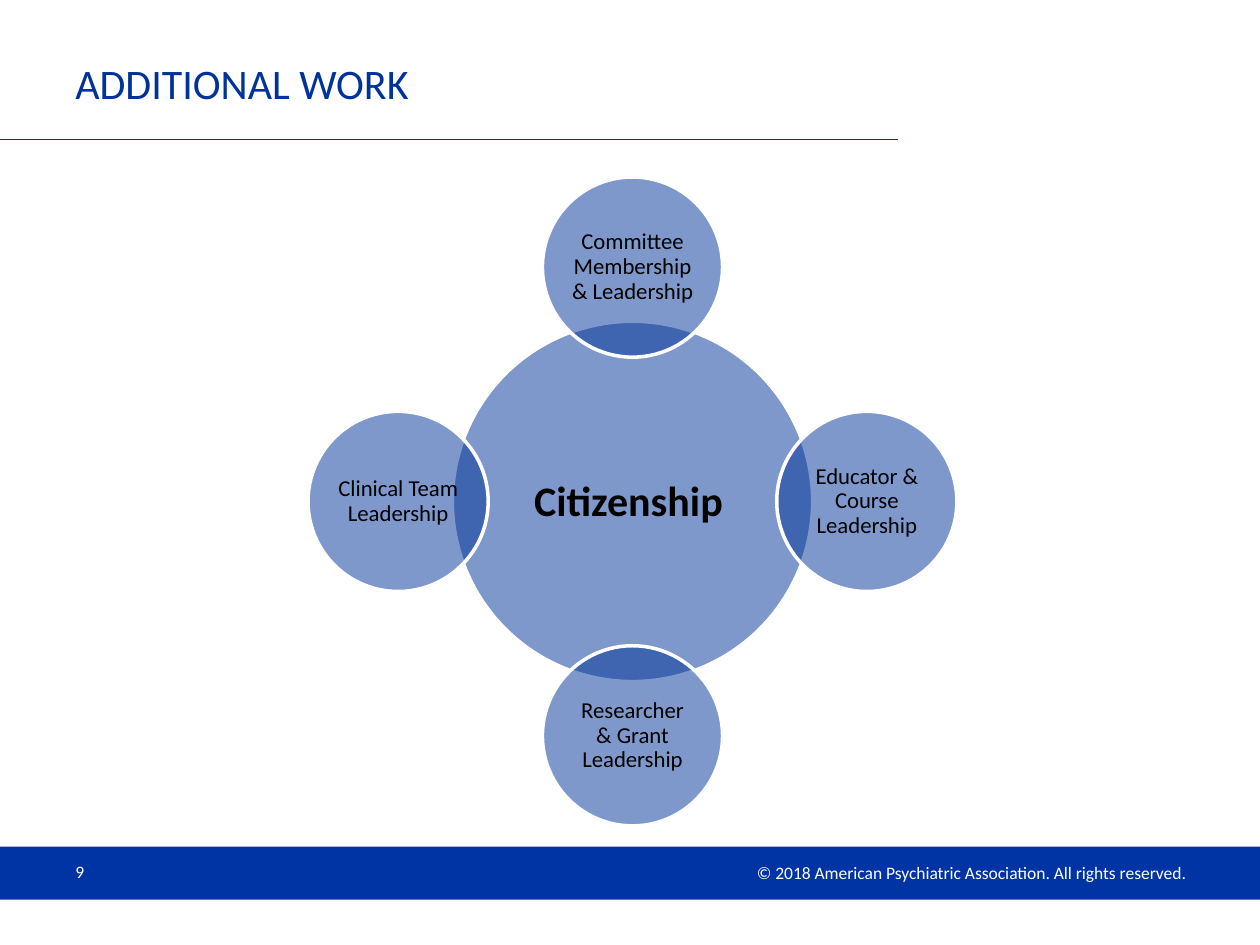
from dataclasses import dataclass

from lxml import etree
from pptx import Presentation
from pptx.dml.color import RGBColor
from pptx.enum.shapes import MSO_CONNECTOR, MSO_SHAPE
from pptx.enum.text import MSO_ANCHOR, PP_ALIGN
from pptx.oxml.ns import qn
from pptx.slide import Slide
from pptx.util import Inches, Pt


def rgb(value):
    return RGBColor.from_string(value)


@dataclass
class Deck:
    """Style and drawing methods for the current slide."""

    s: Slide
    font: str = "Calibri"
    navy: str = "003399"
    band_blue: str = "0033A3"
    white: str = "FFFFFF"
    black: str = "000000"

    def set_text(self, sp, text, size, color, align=PP_ALIGN.LEFT, bold=False, wrap=True):
        tf = sp.text_frame
        tf.word_wrap = wrap
        tf.vertical_anchor = MSO_ANCHOR.MIDDLE
        p = tf.paragraphs[0]
        p.text = text
        p.alignment = align
        p.font.name = self.font
        p.font.size = Pt(size)
        p.font.bold = bold
        p.font.color.rgb = rgb(color)
        return tf

    def text(self, x, y, w, h, *args, **style):
        sp = self.s.shapes.add_textbox(Inches(x), Inches(y), Inches(w), Inches(h))
        self.set_text(sp, *args, **style)

    def band(self, x, y, w, h):
        sp = self.s.shapes.add_shape(
            MSO_SHAPE.RECTANGLE, Inches(x), Inches(y), Inches(w), Inches(h))
        sp.shadow.inherit = False
        sp.fill.solid()
        sp.fill.fore_color.rgb = rgb(self.band_blue)
        sp.line.fill.background()

    def rule(self, x1, x2, y):
        line = self.s.shapes.add_connector(
            MSO_CONNECTOR.STRAIGHT, Inches(x1), Inches(y), Inches(x2), Inches(y))
        line.line.color.rgb = rgb(self.navy)
        line.line.width = Pt(0.75)
        etree.SubElement(line._element.spPr, qn("a:effectLst"))

    def circle(self, cx, cy, d, label=None):
        sp = self.s.shapes.add_shape(
            MSO_SHAPE.OVAL, Inches(cx - d / 2), Inches(cy - d / 2), Inches(d), Inches(d))
        sp.shadow.inherit = False
        sp.fill.solid()
        sp.fill.fore_color.rgb = rgb(self.navy)
        color = sp._element.spPr.find(qn("a:solidFill"))[0]
        etree.SubElement(color, qn("a:alpha")).set("val", "50000")
        sp.line.color.rgb = rgb(self.white)
        sp.line.width = Pt(2)
        if label:
            tf = self.set_text(sp, label, 13, self.black, PP_ALIGN.CENTER)
            tf.margin_left = tf.margin_right = Inches(0.02)
            tf.margin_top = tf.margin_bottom = Inches(0.02)
            tf.paragraphs[0].line_spacing = 0.9


def main():
    prs = Presentation()
    prs.slide_width, prs.slide_height = Inches(10), Inches(7.5)
    deck = Deck(prs.slides.add_slide(prs.slide_layouts[6]))

    deck.band(0, 6.72, 10, 0.42)
    deck.rule(0, 7.13, 1.11)
    deck.text(5.18, 6.79, 4.33, 0.27,
              "© 2018 American Psychiatric Association. All rights reserved.",
              10, deck.white, align=PP_ALIGN.RIGHT)
    deck.text(0.5, 6.72, 2.33, 0.4, "9", 10, deck.white)
    deck.text(0.5, 0.34, 6.63, 0.64, "ADDITIONAL WORK", 24, deck.navy)

    cx, cy, orbit = 5.02, 3.98, 1.86
    roles = [
        (0, -1, "Committee Membership & Leadership"),
        (1, 0, "Educator & Course Leadership"),
        (0, 1, "Researcher & Grant Leadership"),
        (-1, 0, "Clinical Team Leadership"),
    ]
    deck.circle(cx, cy, 2.86)
    for dx, dy, label in roles:
        deck.circle(cx + dx * orbit, cy + dy * orbit, 1.43, label)
    deck.text(4.14, 3.72, 1.72, 0.5, "Citizenship", 24, deck.black, bold=True, wrap=False)

    prs.save("out.pptx")


if __name__ == "__main__":
    main()
